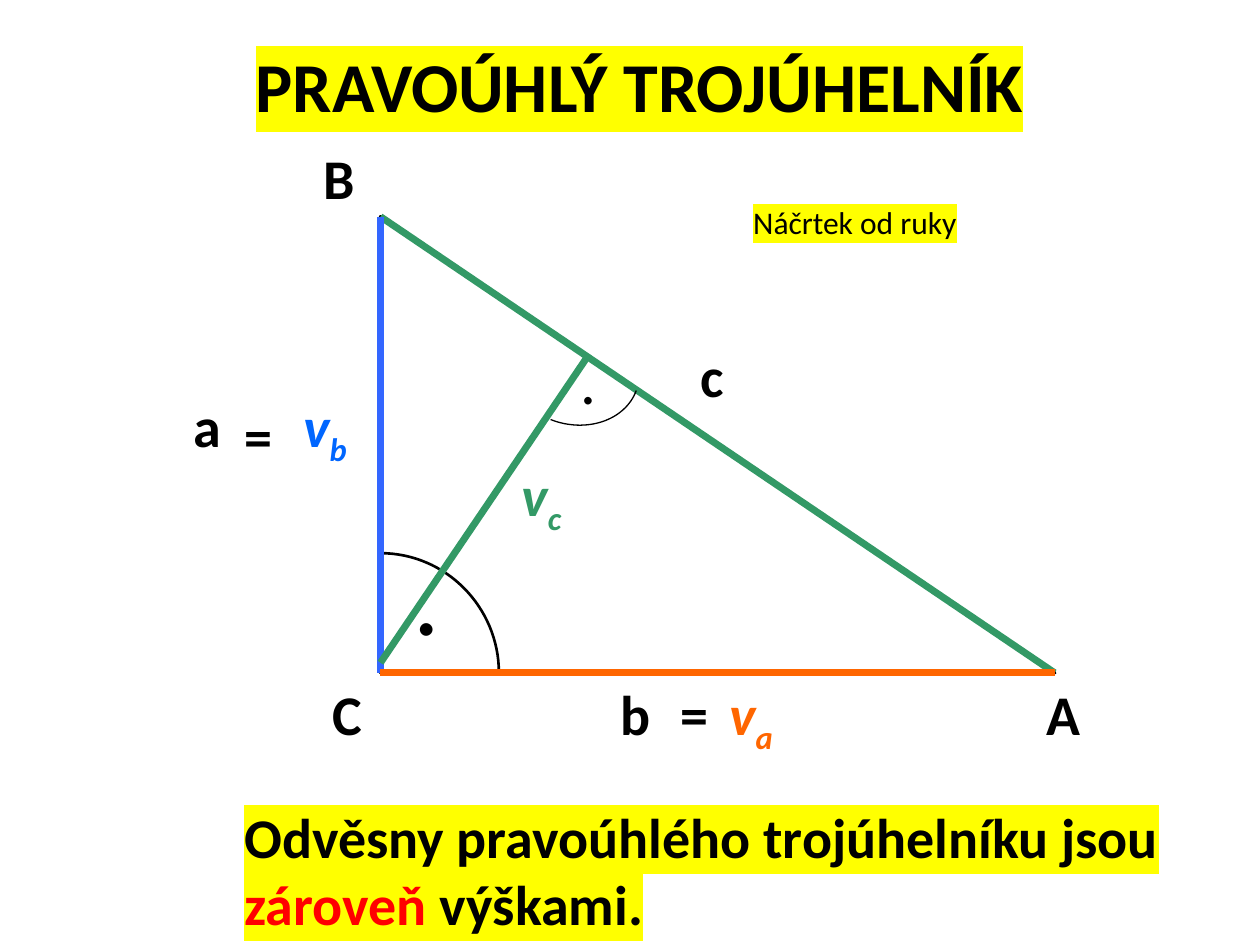
from dataclasses import dataclass

from lxml import etree
from pptx import Presentation
from pptx.dml.color import RGBColor
from pptx.enum.shapes import MSO_CONNECTOR, MSO_SHAPE
from pptx.enum.text import MSO_ANCHOR, MSO_AUTO_SIZE, PP_ALIGN
from pptx.oxml.ns import qn
from pptx.util import Inches, Pt

STRAIGHT = MSO_CONNECTOR.STRAIGHT
RIGHT_TRIANGLE = MSO_SHAPE.RIGHT_TRIANGLE
TOP = MSO_ANCHOR.TOP
FIT_TEXT = MSO_AUTO_SIZE.SHAPE_TO_FIT_TEXT
LEFT = PP_ALIGN.LEFT

COLUMNS, ROWS = 100, 75
CELL = Inches(0.1)
ARC_STEPS = 32


@dataclass(frozen=True)
class Theme:
    font: str = "Calibri"
    ink: str = "000000"
    marker: str = "FFFF00"
    emphasis: str = "FF0000"
    hypotenuse: str = "339966"
    leg_a: str = "3366FF"
    height_b: str = "0066FF"
    leg_b: str = "FF6600"
    title: int = 40
    body: int = 32
    note: int = 18
    big_dot: int = 60
    small_dot: int = 36
    side_width: float = 4
    outline_width: float = 2


THEME = Theme()
B = (30.2, 17.2)
C = (30.2, 53.4)
A = (83.7, 53.4)
LABEL_ROW = C[1]
LABEL_SIDE = 6.3


def grid(*cells):
    return [round(cell * CELL) for cell in cells]


def add_run(paragraph, text, color=THEME.ink, size=THEME.body, bold=True,
            italic=False, marker=None, subscript=False):
    run = paragraph.add_run()
    run.text = text
    font = run.font
    font.size, font.bold, font.italic = Pt(size), bold, italic
    font.color.rgb = RGBColor.from_string(color)
    font.name = THEME.font
    properties = run._r.get_or_add_rPr()
    if subscript:
        properties.set("baseline", "-25000")
    if marker:
        highlight = etree.Element(qn("a:highlight"))
        etree.SubElement(highlight, qn("a:srgbClr")).set("val", marker)
        properties.find(qn("a:latin")).addprevious(highlight)


def prepare_frame(frame):
    frame.word_wrap = True
    frame.auto_size = FIT_TEXT
    frame.vertical_anchor = TOP
    paragraph = frame.paragraphs[0]
    paragraph.alignment = LEFT
    return paragraph


def add_label(slide, text, place, extent=(LABEL_SIDE, LABEL_SIDE), **style):
    box = slide.shapes.add_textbox(*grid(*place, *extent))
    paragraph = prepare_frame(box.text_frame)
    add_run(paragraph, text, **style)
    return paragraph


def add_height_label(slide, side, place, width, color):
    paragraph = add_label(slide, "v", place, (width, LABEL_SIDE),
                          color=color, italic=True)
    add_run(paragraph, side, color=color, italic=True, subscript=True)


def add_title(slide, text):
    title = slide.shapes.title
    title.left, title.top, title.width, title.height = grid(19.3, 2.9, 67.7, 7.7)
    add_run(prepare_frame(title.text_frame), text,
            size=THEME.title, marker=THEME.marker)


def style_outline(shape, width):
    shape.shadow.inherit = False
    shape.fill.background()
    shape.line.color.rgb = RGBColor.from_string(THEME.ink)
    shape.line.width = Pt(width)


def add_triangle(slide):
    extent = (A[0] - C[0], C[1] - B[1])
    triangle = slide.shapes.add_shape(RIGHT_TRIANGLE, *grid(*B, *extent))
    style_outline(triangle, THEME.outline_width)


def add_side(slide, start, end, color):
    side = slide.shapes.add_connector(STRAIGHT, *grid(*start, *end))
    side.line.color.rgb = RGBColor.from_string(color)
    side.line.width = Pt(THEME.side_width)
    etree.SubElement(side._element.spPr, qn("a:effectLst"))


def curve_point(controls, share):
    rest = 1 - share
    weights = (rest ** 3, 3 * rest ** 2 * share, 3 * rest * share ** 2, share ** 3)
    return grid(*(sum(w * p[axis] for w, p in zip(weights, controls))
                  for axis in (0, 1)))


def add_angle_arc(slide, controls, width):
    points = [curve_point(controls, step / ARC_STEPS)
              for step in range(ARC_STEPS + 1)]
    builder = slide.shapes.build_freeform(*points[0])
    builder.add_line_segments(points[1:], close=False)
    style_outline(builder.convert_to_shape(), width)


def main():
    deck = Presentation()
    deck.slide_width, deck.slide_height = grid(COLUMNS, ROWS)
    slide = deck.slides.add_slide(deck.slide_layouts[5])

    add_title(slide, "PRAVOÚHLÝ TROJÚHELNÍK")
    add_triangle(slide)
    add_angle_arc(slide, [(30.2, 43.9), (35.4, 43.9), (39.6, 48.2), (39.6, 53.4)], 1.5)
    add_label(slide, ".", (31.8, 41.6), (8.7, 11), size=THEME.big_dot, bold=False)

    for name, place in (("A", (82.1, LABEL_ROW)), ("B", (24.7, 10.9)),
                        ("C", (25.4, LABEL_ROW)), ("b", (48.3, LABEL_ROW)),
                        ("c", (54.6, 26.6)), ("a", (14.4, 30.6))):
        add_label(slide, name, place)

    for start, end, color in ((B, A, THEME.hypotenuse), (B, C, THEME.leg_a),
                              (C, A, THEME.leg_b)):
        add_side(slide, start, end, color)

    for side, place, width, color in (
            ("a", (56.9, LABEL_ROW), 8.7, THEME.leg_b),
            ("c", (40.4, 36.1), 6.1, THEME.hypotenuse),
            ("b", (23.1, 30.6), 7.1, THEME.height_b)):
        add_height_label(slide, side, place, width, color)

    add_side(slide, (30.2, 52.6), (46.7, 28.2), THEME.hypotenuse)
    add_label(slide, ".", (45.1, 26.6), (7.1, 7), size=THEME.small_dot, bold=False)
    add_angle_arc(slide, [(43.7, 33.3), (46.5, 34.4), (49.6, 33.4), (50.5, 31)], 0.75)

    for place in ((18.4, 31.4), (53, LABEL_ROW)):
        add_label(slide, "=", place, (11, LABEL_SIDE))

    statement = add_label(slide, "Odvěsny pravoúhlého trojúhelníku jsou ",
                          (18.4, 63.2), (81, 11.8), marker=THEME.marker)
    add_run(statement, "zároveň", color=THEME.emphasis, marker=THEME.marker)
    add_run(statement, " výškami.", marker=THEME.marker)
    add_label(slide, "Náčrtek od ruky", (58.8, 15.6), (28.3, 4),
              size=THEME.note, bold=False, marker=THEME.marker)

    deck.save("out.pptx")


if __name__ == "__main__":
    main()
